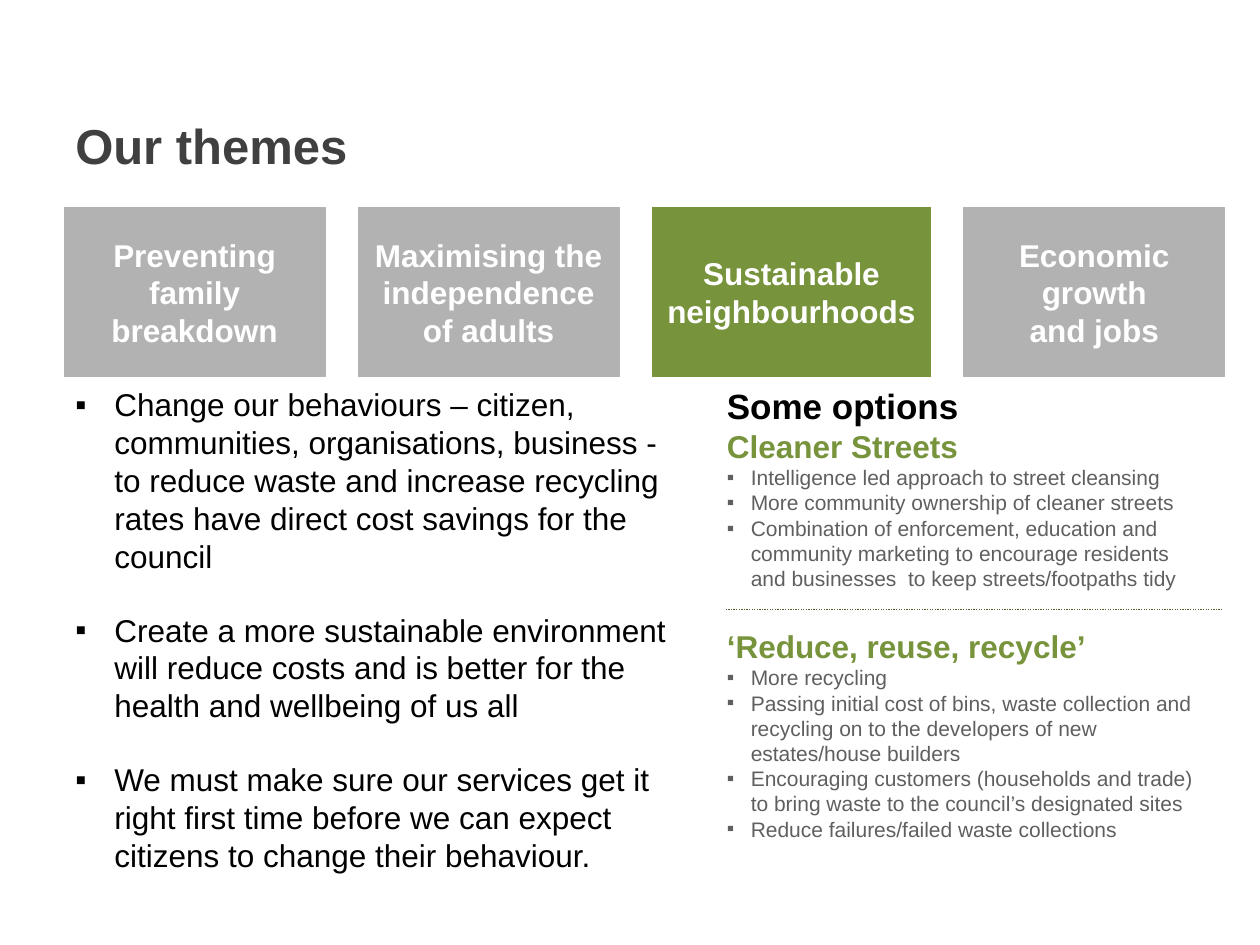
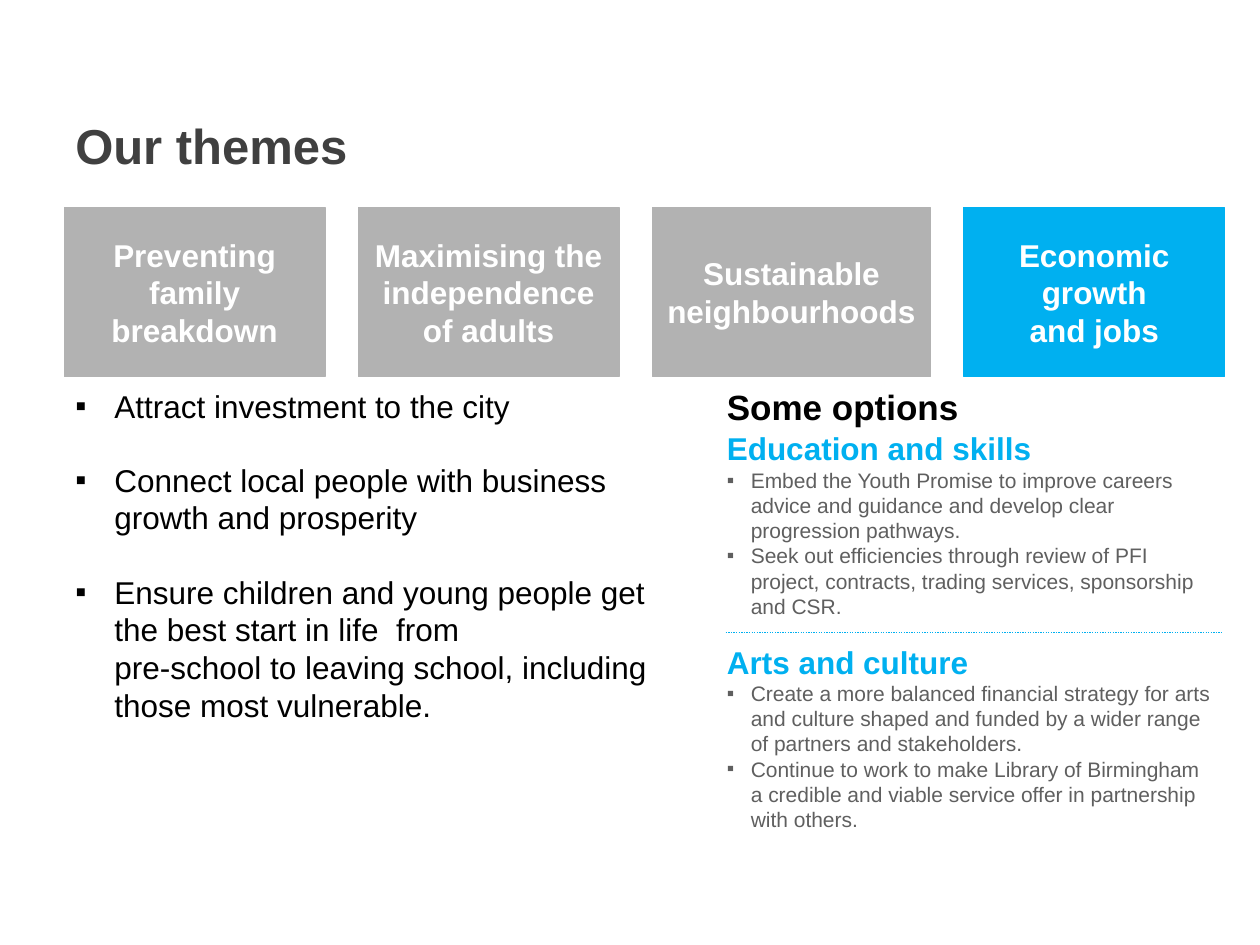
"""Build two theme slides with shared tiles, points and options."""
from dataclasses import dataclass
from itertools import accumulate

from lxml.etree import SubElement
from pptx import Presentation
from pptx.dml.color import RGBColor
from pptx.enum.dml import MSO_LINE
from pptx.enum.shapes import MSO_CONNECTOR as Connector, MSO_SHAPE as Shape
from pptx.enum.text import MSO_ANCHOR as Anchor, MSO_AUTO_SIZE as AutoSize, PP_ALIGN as Align
from pptx.oxml.ns import qn
from pptx.slide import Slide
from pptx.text.text import TextFrame
from pptx.util import Inches, Length, Pt

SLIDE_WIDTH, SLIDE_HEIGHT = Inches(10), Inches(7.5)
COLUMNS, ROWS = 100, 75
GREY, GREEN, DARK_GREEN, BLUE = "B2B2B2", "77933C", "4F6228", "00B0F0"


@dataclass(frozen=True)
class Area:
    """A place on the slide in grid columns and rows."""
    column: float
    row: float
    columns: float
    rows: float

    def lengths(self) -> tuple[Length, Length, Length, Length]:
        """Give left, top, width and height."""
        return across(self.column), down(self.row), across(self.columns), down(self.rows)


@dataclass(frozen=True)
class Style:
    """The look of a paragraph."""
    size: float
    color: str
    bold: bool = False
    indent: float = 0
    align: Align = Align.LEFT


@dataclass(frozen=True)
class Entry:
    """One paragraph and the points of space above it."""
    text: str
    style: Style
    gap: float = 0


@dataclass(frozen=True)
class Theme:
    """A theme tile and its width in columns."""
    lines: tuple[str, ...]
    columns: float = 20.7


@dataclass(frozen=True)
class Option:
    """A group of options under a heading."""
    heading: str
    actions: tuple[str, ...]


@dataclass(frozen=True)
class ThemePage:
    """The content of one slide."""
    active: int
    accent: str
    rule_color: str
    points: tuple[str, ...]
    points_area: Area
    options_row: float
    options: tuple[Option, ...]
    options_area: Area
    option_gap: float
    rule_row: float


TITLE = Style(28, "404040", True)
TILE_LABEL = Style(18, "FFFFFF", True, align=Align.CENTER)
POINT = Style(18, "000000", indent=0.31)
OPTIONS_TITLE = Style(20, "000000", True)
ACTION = Style(12, "5F5F5F", indent=0.19)
POINT_GAP = 20.7

TILES = Area(5.1, 16.5, 92.1, 13.4)
THEMES = (
    Theme(("Preventing family breakdown",)),
    Theme(("Maximising the independence", "of adults")),
    Theme(("Sustainable neighbourhoods",), 22.1),
    Theme(("Economic", "growth\nand jobs")),
)

PAGES = (
    ThemePage(
        active=2, accent=GREEN, rule_color=DARK_GREEN,
        points=(
            "Change our behaviours – citizen, communities, organisations, business - "
            "to reduce waste and increase recycling rates have direct cost savings for the council",
            "Create a more sustainable environment will reduce costs and is better for "
            "the health and wellbeing of us all",
            "We must make sure our services get it right first time before we can expect "
            "citizens to change their behaviour.",
        ),
        points_area=Area(5, 30.1, 49.7, 40.4),
        options_row=30,
        options=(
            Option("Cleaner Streets", (
                "Intelligence led approach to street cleansing",
                "More community ownership of cleaner streets",
                "Combination of enforcement, education and community marketing to encourage "
                "residents and businesses  to keep streets/footpaths tidy",
            )),
            Option("‘Reduce, reuse, recycle’", (
                "More recycling",
                "Passing initial cost of bins, waste collection and recycling on to the "
                "developers of new estates/house builders",
                "Encouraging customers (households and trade) to bring waste to the "
                "council’s designated sites",
                "Reduce failures/failed waste collections",
            )),
        ),
        options_area=Area(56.7, 33.4, 39.9, 34.3),
        option_gap=20.7, rule_row=48.4,
    ),
    ThemePage(
        active=3, accent=BLUE, rule_color=BLUE,
        points=(
            "Attract investment to the city",
            "Connect local people with business growth and prosperity",
            "Ensure children and young people get the best start in life  from\n"
            "pre-school to leaving school, including those most vulnerable.",
        ),
        points_area=Area(5, 30.2, 49.7, 28.3),
        options_row=30.1,
        options=(
            Option("Education and skills", (
                "Embed the Youth Promise to improve careers advice and guidance and "
                "develop clear progression pathways.",
                "Seek out efficiencies through review of PFI project, contracts, trading "
                "services, sponsorship and CSR.",
            )),
            Option("Arts and culture", (
                "Create a more balanced financial strategy for arts and culture shaped and "
                "funded by a wider range of partners and stakeholders.",
                "Continue to work to make Library of Birmingham a credible and viable "
                "service offer in partnership with others.",
            )),
        ),
        options_area=Area(56.7, 33.6, 40.5, 33.3),
        option_gap=13.8, rule_row=50.2,
    ),
)


def across(columns: float) -> Length:
    """Turn grid columns into a length."""
    return Length(round(SLIDE_WIDTH * columns / COLUMNS))


def down(rows: float) -> Length:
    """Turn grid rows into a length."""
    return Length(round(SLIDE_HEIGHT * rows / ROWS))


def rgb(code: str) -> RGBColor:
    """Turn a hex string into a colour."""
    return RGBColor.from_string(code)


def assign(target: object, values: dict[str, object]) -> None:
    """Set each named attribute of the target."""
    for name, value in values.items():
        setattr(target, name, value)


def write(frame: TextFrame, entries: list[Entry]) -> None:
    """Fill a text frame with styled paragraphs."""
    frame.word_wrap = True
    for number, entry in enumerate(entries):
        paragraph = frame.add_paragraph() if number else frame.paragraphs[0]
        style = entry.style
        paragraph.text = entry.text
        if style.indent:
            properties = paragraph._p.get_or_add_pPr()
            properties.set("marL", str(Inches(style.indent)))
            properties.set("indent", str(-Inches(style.indent)))
            SubElement(properties, qn("a:buFont")).set("typeface", "Arial")
            SubElement(properties, qn("a:buChar")).set("char", "▪")
        paragraph.alignment = style.align
        if entry.gap:
            paragraph.space_before = Pt(entry.gap)
        for run in paragraph.runs:
            assign(run.font, {"name": "Arial", "size": Pt(style.size), "bold": style.bold})
            run.font.color.rgb = rgb(style.color)


def add_text(slide: Slide, area: Area, entries: list[Entry],
             fit: AutoSize = AutoSize.SHAPE_TO_FIT_TEXT) -> None:
    """Add a text box of styled paragraphs."""
    frame = slide.shapes.add_textbox(*area.lengths()).text_frame
    write(frame, entries)
    frame.auto_size = fit


def add_tiles(slide: Slide, active: int, accent: str) -> None:
    """Draw the row of themes with the active one in the accent colour."""
    widths = [theme.columns for theme in THEMES]
    gap = (TILES.columns - sum(widths)) / (len(THEMES) - 1)
    lefts = accumulate((width + gap for width in widths), initial=TILES.column)
    for number, (theme, left) in enumerate(zip(THEMES, lefts)):
        area = Area(left, TILES.row, theme.columns, TILES.rows)
        tile = slide.shapes.add_shape(Shape.RECTANGLE, *area.lengths())
        color = rgb(accent if number == active else GREY)
        tile.shadow.inherit = False
        tile.fill.solid()
        tile.fill.fore_color.rgb = color
        tile.line.color.rgb = color
        tile.line.width = Pt(0.75)
        tile.text_frame.vertical_anchor = Anchor.MIDDLE
        write(tile.text_frame, [Entry(line, TILE_LABEL) for line in theme.lines])


def add_rule(slide: Slide, row: float, color: str) -> None:
    """Draw the dotted rule between the option groups."""
    rule = slide.shapes.add_connector(
        Connector.STRAIGHT, across(57.6), down(row), across(97), down(row))
    SubElement(rule._element.spPr, qn("a:effectLst"))
    rule.line.color.rgb = rgb(color)
    assign(rule.line, {"width": Pt(0.75), "dash_style": MSO_LINE.ROUND_DOT})


def option_entries(page: ThemePage) -> list[Entry]:
    """List the headings and actions of all option groups."""
    heading = Style(18, page.accent, True)
    entries = []
    for number, option in enumerate(page.options):
        entries.append(Entry(option.heading, heading, page.option_gap if number else 0))
        entries.extend(Entry(action, ACTION) for action in option.actions)
    return entries


def add_page(slide: Slide, page: ThemePage) -> None:
    """Draw one theme slide."""
    add_tiles(slide, page.active, page.accent)
    add_text(slide, Area(5, 8.7, 92.3, 7.8), [Entry("Our themes", TITLE)], AutoSize.NONE)
    add_text(slide, page.points_area, [
        Entry(point, POINT, POINT_GAP if number else 0)
        for number, point in enumerate(page.points)])
    add_text(slide, page.options_area, option_entries(page))
    add_text(slide, Area(56.7, page.options_row, 40.5, 4.4),
             [Entry("Some options", OPTIONS_TITLE)])
    add_rule(slide, page.rule_row, page.rule_color)


def main() -> None:
    """Build and save the presentation."""
    deck = Presentation()
    assign(deck, {"slide_width": SLIDE_WIDTH, "slide_height": SLIDE_HEIGHT})
    for page in PAGES:
        add_page(deck.slides.add_slide(deck.slide_layouts[6]), page)
    deck.save("out.pptx")


if __name__ == "__main__":
    main()
